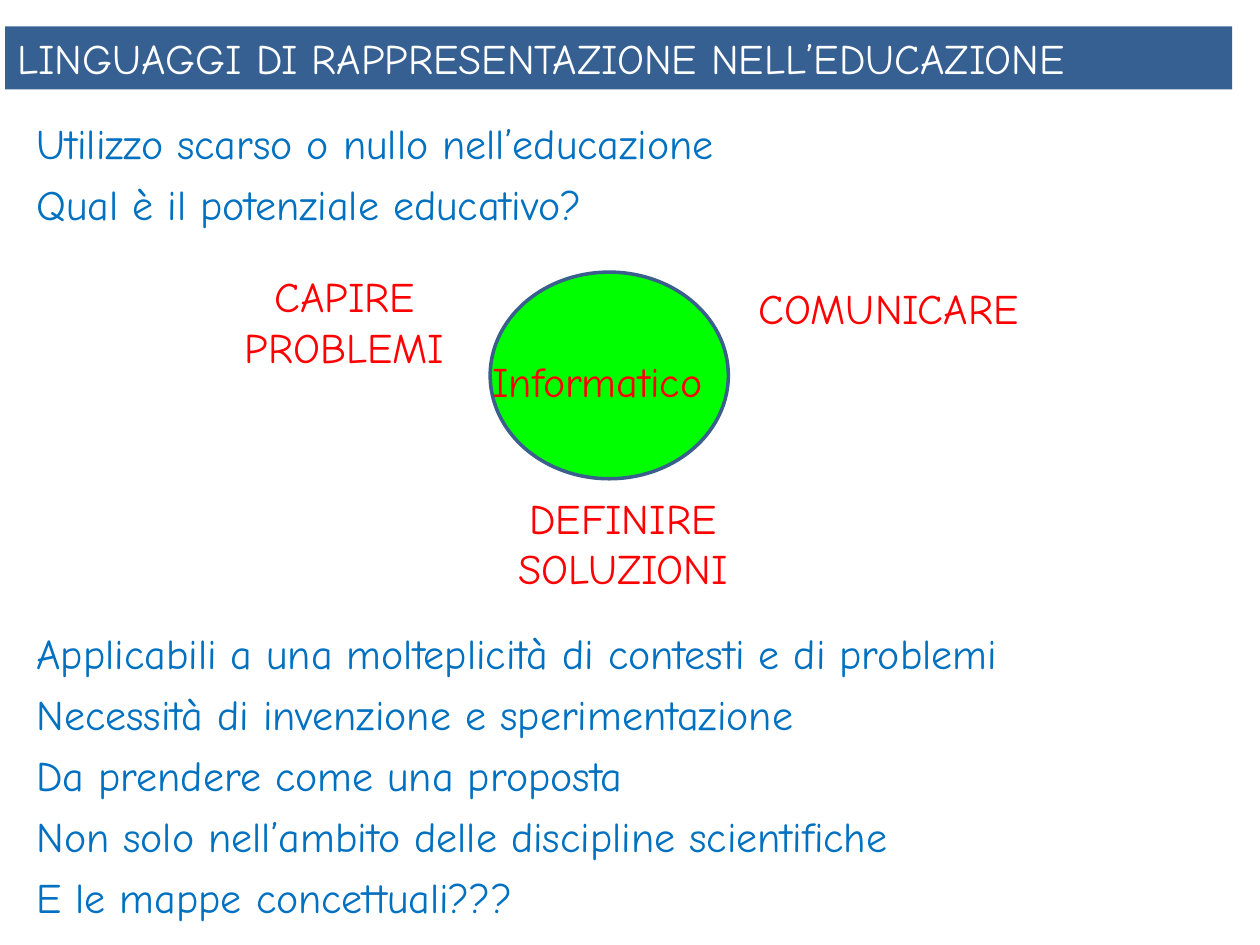
from pptx import Presentation
from pptx.dml.color import RGBColor
from pptx.enum.shapes import MSO_SHAPE
from pptx.enum.text import MSO_ANCHOR, PP_ALIGN
from pptx.util import Inches, Pt

RECTANGLE, ELLIPSE = MSO_SHAPE.RECTANGLE, MSO_SHAPE.OVAL
LEFT, CENTER = PP_ALIGN.LEFT, PP_ALIGN.CENTER
MIDDLE = MSO_ANCHOR.MIDDLE

WHITE = RGBColor(0xFF, 0xFF, 0xFF)
BANNER_BLUE = RGBColor(0x37, 0x60, 0x92)
OUTLINE_BLUE = RGBColor(0x3A, 0x5F, 0x8C)
TEXT_BLUE = RGBColor(0x00, 0x70, 0xC0)
GREEN = RGBColor(0x00, 0xFF, 0x00)
RED = RGBColor(0xFF, 0x00, 0x00)

COLUMNS, ROWS = 100, 75  # grid cells of a tenth of an inch
LINE_GAP, DIAGRAM_GAP = 6, 228  # points before a paragraph


class SlideBuilder:
    """Holds the text style and the slide; places are (column, row, columns, rows)."""

    font_name = "Comic Neue"
    font_size = Pt(24)

    def __init__(self, presentation):
        self.cell_width = presentation.slide_width / COLUMNS
        self.cell_height = presentation.slide_height / ROWS
        self.slide = presentation.slides.add_slide(presentation.slide_layouts[6])

    def place(self, column, row, columns, rows):
        return (round(column * self.cell_width), round(row * self.cell_height),
                round(columns * self.cell_width), round(rows * self.cell_height))

    def fill_text(self, frame, text, color, align):
        frame.text = text
        for paragraph in frame.paragraphs:
            paragraph.alignment = align
            paragraph.font.name = self.font_name
            paragraph.font.size = self.font_size
            paragraph.font.color.rgb = color

    def shape(self, kind, place, fill, outline=None):
        shape = self.slide.shapes.add_shape(kind, *self.place(*place))
        shape.shadow.inherit = False
        shape.fill.solid()
        shape.fill.fore_color.rgb = fill
        if outline is None:
            shape.line.fill.background()
        else:
            shape.line.color.rgb = outline
            shape.line.width = Pt(2)
        return shape

    def banner(self, text, place):
        frame = self.shape(RECTANGLE, place, BANNER_BLUE).text_frame
        frame.vertical_anchor = MIDDLE
        self.fill_text(frame, text, WHITE, LEFT)

    def label(self, text, place, align=LEFT):
        frame = self.slide.shapes.add_textbox(*self.place(*place)).text_frame
        frame.word_wrap = False
        self.fill_text(frame, text, RED, align)

    def statements(self, above, below, place):
        """Set two groups of lines, leaving room for the diagram between them."""
        frame = self.slide.shapes.add_textbox(*self.place(*place)).text_frame
        frame.word_wrap = True
        self.fill_text(frame, "\n".join(above + below), TEXT_BLUE, LEFT)
        for paragraph in frame.paragraphs[1:]:
            paragraph.space_before = Pt(LINE_GAP)
        frame.paragraphs[len(above)].space_before = Pt(DIAGRAM_GAP)


def main():
    presentation = Presentation()
    presentation.slide_width, presentation.slide_height = Inches(10), Inches(7.5)
    builder = SlideBuilder(presentation)

    builder.banner("LINGUAGGI DI RAPPRESENTAZIONE NELL’EDUCAZIONE", (0.4, 2.1, 97.4, 5))
    builder.statements(
        ["Utilizzo scarso o nullo nell’educazione",
         "Qual è il potenziale educativo?"],
        ["Applicabili a una molteplicità di contesti e di problemi",
         "Necessità di invenzione e sperimentazione",
         "Da prendere come una proposta",
         "Non solo nell’ambito delle discipline scientifiche",
         "E le mappe concettuali???"],
        (1.9, 8.8, 92.2, 66.2))

    builder.shape(ELLIPSE, (38.9, 21.6, 18.9, 16.4), GREEN, OUTLINE_BLUE)
    builder.label("Informatico", (38.1, 27.7, 21.1, 5))
    builder.label("CAPIRE\nPROBLEMI", (17.6, 21, 19.5, 9.1), CENTER)
    builder.label("COMUNICARE", (59.2, 21.9, 25.4, 5))
    builder.label("DEFINIRE\vSOLUZIONI", (38.1, 38.6, 22.7, 9.1), CENTER)

    presentation.save("out.pptx")


if __name__ == "__main__":
    main()
